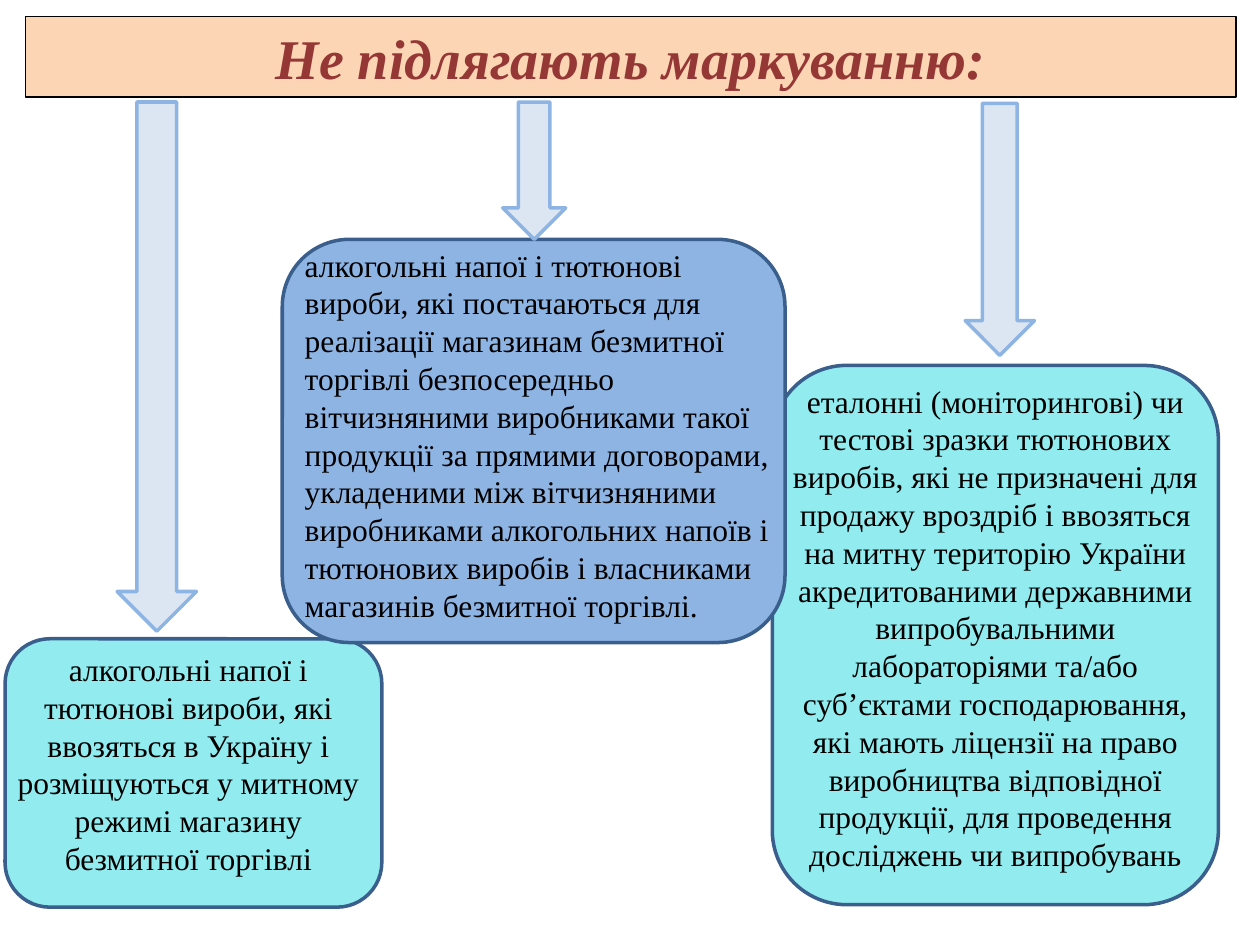
from dataclasses import dataclass

import pptx
import pptx.dml.color
import pptx.enum.shapes
import pptx.enum.text
import pptx.util

Inches = pptx.util.Inches
Shape = pptx.enum.shapes.MSO_SHAPE
Align = pptx.enum.text.PP_ALIGN
Area = tuple[float, float, float, float]  # left, top, width, height in inches


@dataclass(frozen=True)
class Theme:
    font: str = "Times New Roman"
    title_size: int = 32
    body_size: int = 18
    title_text: str = "953735"
    title_fill: str = "FCD5B5"
    text: str = "000000"
    turquoise: str = "91EBEF"
    blue: str = "8EB4E3"
    pale_blue: str = "DCE6F2"
    card_line: str = "3A5F8C"


@dataclass(frozen=True)
class Card:
    area: Area
    text_area: Area
    fill: str
    text: str
    align: Align = Align.CENTER


THEME = Theme()

CARDS = [
    Card((0.04, 5.07, 2.99, 2.13), (0, 5.11, 2.99, 2.08), THEME.turquoise,
         "алкогольні напої і тютюнові вироби, які ввозяться в Україну і "
         "розміщуються у митному режимі магазину безмитної торгівлі"),
    Card((6.13, 2.9, 3.54, 4.28), (6.13, 2.98, 3.54, 4.04), THEME.turquoise,
         "еталонні (моніторингові) чи тестові зразки тютюнових виробів, які не "
         "призначені для продажу вроздріб і ввозяться на митну територію України "
         "акредитованими державними випробувальними лабораторіями та/або "
         "суб’єктами господарювання, які мають ліцензії на право виробництва "
         "відповідної продукції, для проведення досліджень чи випробувань"),
    Card((2.24, 1.9, 3.99, 3.2), (2.32, 1.9, 3.91, 3.46), THEME.blue,
         "алкогольні напої і тютюнові вироби, які постачаються для реалізації "
         "магазинам безмитної торгівлі безпосередньо вітчизняними виробниками "
         "такої продукції за прямими договорами, укладеними між вітчизняними "
         "виробниками алкогольних напоїв і тютюнових виробів і власниками "
         "магазинів безмитної торгівлі.", Align.LEFT),
]

ARROWS: list[Area] = [
    (0.93, 0.81, 0.63, 4.2),
    (3.99, 0.81, 0.5, 1.09),
    (7.66, 0.82, 0.55, 2),
]


def rgb(value: str) -> pptx.dml.color.RGBColor:
    return pptx.dml.color.RGBColor.from_string(value)


def paint(box, fill: str, line: str, width: float) -> None:
    box.fill.solid()
    box.fill.fore_color.rgb = rgb(fill)
    box.line.color.rgb = rgb(line)
    box.line.width = pptx.util.Pt(width)


def write(box, text: str, *, size: int = THEME.body_size, color: str = THEME.text,
          align: Align = Align.CENTER, anchor=pptx.enum.text.MSO_ANCHOR.TOP,
          bold: bool = False, italic: bool = False) -> None:
    frame = box.text_frame
    frame.word_wrap = True
    frame.auto_size = pptx.enum.text.MSO_AUTO_SIZE.NONE
    frame.vertical_anchor = anchor
    para = frame.paragraphs[0]
    para.alignment = align
    span = para.add_run()
    span.text = text
    span.font.name = THEME.font
    span.font.size = pptx.util.Pt(size)
    span.font.color.rgb = rgb(color)
    span.font.bold = bold
    span.font.italic = italic


def draw_shape(page, kind: Shape, area: Area, fill: str, line: str) -> None:
    box = page.shapes.add_shape(kind, *map(Inches, area))
    box.shadow.inherit = False
    paint(box, fill, line, 2)


def draw_title(page, text: str) -> None:
    title = page.shapes.title
    title.left, title.top, title.width, title.height = map(
        Inches, (0.2, 0.13, 9.61, 0.64))
    paint(title, THEME.title_fill, THEME.text, 0.75)
    write(title, text, size=THEME.title_size, color=THEME.title_text,
          anchor=pptx.enum.text.MSO_ANCHOR.MIDDLE, bold=True, italic=True)


def draw_card(page, card: Card) -> None:
    draw_shape(page, Shape.FLOWCHART_ALTERNATE_PROCESS, card.area,
               card.fill, THEME.card_line)
    label = page.shapes.add_textbox(*map(Inches, card.text_area))
    write(label, card.text, align=card.align)


def main() -> None:
    deck = pptx.Presentation()
    deck.slide_width, deck.slide_height = Inches(10), Inches(7.5)
    page = deck.slides.add_slide(deck.slide_layouts.get_by_name("Title Only"))

    # Heading
    draw_title(page, "Не підлягають маркуванню:")

    # Exempt goods, the middle card lying over its neighbours
    for card in CARDS:
        draw_card(page, card)

    # Arrows from the heading to the cards
    for area in ARROWS:
        draw_shape(page, Shape.DOWN_ARROW, area, THEME.pale_blue, THEME.blue)

    deck.save("out.pptx")


if __name__ == "__main__":
    main()
